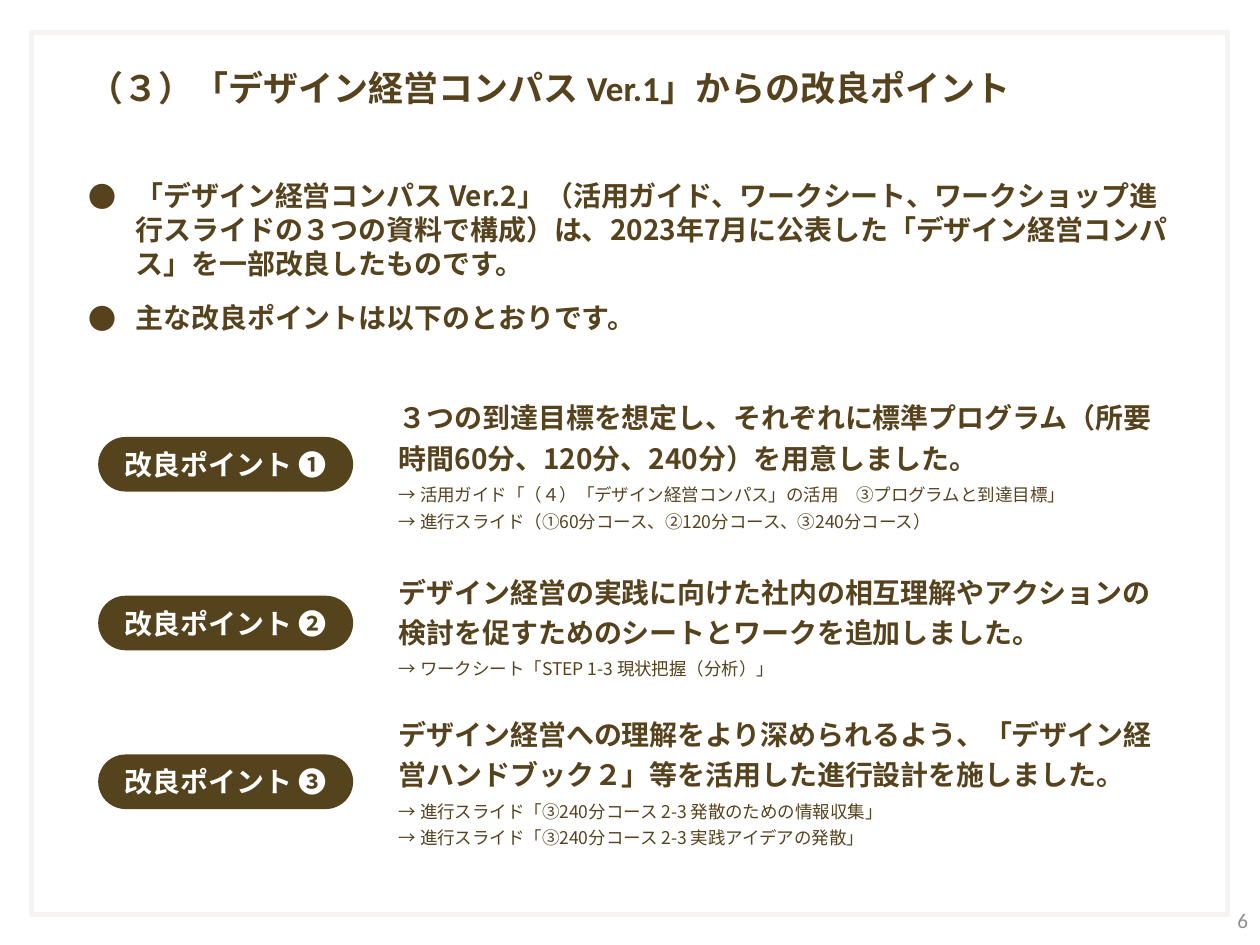
from lxml.etree import SubElement
from pptx import Presentation
from pptx.dml.color import RGBColor
from pptx.enum.shapes import MSO_SHAPE as SHAPE
from pptx.enum.text import MSO_ANCHOR as ANCHOR, MSO_AUTO_SIZE as AUTO, PP_ALIGN as ALIGN
from pptx.oxml.ns import qn
from pptx.util import Cm, Pt

COLORS = {"text": "56431E", "pill": "55431E", "white": "FFFFFF",
          "frame": "F6F3F1", "number": "8F8F8D"}
LATIN, JAPANESE = "Calibri", "Noto Sans CJK JP"

TITLE = "（３）「デザイン経営コンパス Ver.1」からの改良ポイント"
INTRO = [
    "「デザイン経営コンパス Ver.2」（活用ガイド、ワークシート、ワークショップ進行スライドの"
    "３つの資料で構成）は、2023年7月に公表した「デザイン経営コンパス」を一部改良したものです。",
    "主な改良ポイントは以下のとおりです。",
]
# Pill label, headline, references, top of the text and its height in cm
POINTS = [
    ("改良ポイント ❶",
     "３つの到達目標を想定し、それぞれに標準プログラム（所要時間60分、120分、240分）を用意しました。",
     ["→ 活用ガイド「（４）「デザイン経営コンパス」の活用　③プログラムと到達目標」",
      "→ 進行スライド（①60分コース、②120分コース、③240分コース）"], 7.92, 2.92),
    ("改良ポイント ❷",
     "デザイン経営の実践に向けた社内の相互理解やアクションの検討を促すためのシートとワークを追加しました。",
     ["→ ワークシート「STEP 1-3 現状把握（分析）」"], 11.43, 2.26),
    ("改良ポイント ❸",
     "デザイン経営への理解をより深められるよう、「デザイン経営ハンドブック２」等を活用した進行設計を施しました。",
     ["→ 進行スライド「③240分コース 2-3 発散のための情報収集」",
      "→ 進行スライド「③240分コース 2-3 実践アイデアの発散」"], 14.3, 2.92),
]


def color(name):
    return RGBColor.from_string(COLORS[name])


def place(sp, left, top, width, height):
    sp.left, sp.top, sp.width, sp.height = Cm(left), Cm(top), Cm(width), Cm(height)


def style(p, size, name, bold=True, font=LATIN):
    for r in p.runs:
        r.font.size, r.font.bold, r.font.name = Pt(size), bold, font
        r.font.color.rgb = color(name)
        SubElement(r._r.get_or_add_rPr(), qn("a:ea")).set("typeface", JAPANESE)


def add_frame(s, left, top, width, height):
    sp = s.shapes.add_shape(SHAPE.RECTANGLE, Cm(left), Cm(top), Cm(width), Cm(height))
    sp.shadow.inherit = False
    sp.fill.solid()
    sp.fill.fore_color.rgb = color("white")
    sp.line.color.rgb = color("frame")
    sp.line.width = Pt(3)
    s.shapes._spTree.insert(2, sp._element)  # behind the placeholders


def add_title(s, left, top, width, height):
    sp = s.shapes.title
    place(sp, left, top, width, height)
    tf = sp.text_frame
    tf.text = TITLE
    tf.auto_size, tf.vertical_anchor = AUTO.NONE, ANCHOR.TOP
    tf.paragraphs[0].alignment = ALIGN.LEFT
    style(tf.paragraphs[0], 20, "text")


def add_intro(s, left, top, width, height):
    sp = s.placeholders[1]
    place(sp, left, top, width, height)
    tf = sp.text_frame
    tf.text = "\n".join(INTRO)
    tf.auto_size = AUTO.NONE
    for p in tf.paragraphs:
        p.space_before, p.space_after = Pt(0), Pt(12)
        pPr = p._p.get_or_add_pPr()
        pPr.set("marL", str(Cm(0.96)))
        pPr.set("indent", str(Cm(-0.96)))
        SubElement(pPr, qn("a:buFont")).set("typeface", JAPANESE)
        SubElement(pPr, qn("a:buChar")).set("char", "●")
        style(p, 16, "text", font=JAPANESE)


def add_pill(s, label, left, top, width, height):
    sp = s.shapes.add_shape(SHAPE.ROUNDED_RECTANGLE, Cm(left), Cm(top), Cm(width), Cm(height))
    sp.shadow.inherit = False
    sp.adjustments[0] = 0.5
    sp.fill.solid()
    sp.fill.fore_color.rgb = color("pill")
    sp.line.fill.background()
    tf = sp.text_frame
    tf.text = label
    tf.vertical_anchor = ANCHOR.MIDDLE
    tf.paragraphs[0].alignment = ALIGN.CENTER
    style(tf.paragraphs[0], 16, "white")


def add_point_text(s, headline, references, left, top, width, height):
    tf = s.shapes.add_textbox(Cm(left), Cm(top), Cm(width), Cm(height)).text_frame
    tf.word_wrap = True
    tf.margin_left = tf.margin_right = tf.margin_bottom = 0
    tf.margin_top = Cm(0.03)
    tf.text = "\n".join([headline, *references])
    for i, p in enumerate(tf.paragraphs):
        p.line_spacing = 1.2
        if i:
            p.space_before = Pt(3 if i == 1 else 0.8)
        p._p.get_or_add_pPr().set("marL", str(Cm(0.03)))
        style(p, 10 if i else 16, "text", bold=i == 0, font=JAPANESE)


def add_points(s, left, top, width):
    """Pills at an equal pitch, each with its explanation on the right."""
    for i, (label, headline, references, text_top, text_height) in enumerate(POINTS):
        add_pill(s, label, left, top + i * 3.2, 5.14, 1.1)
        add_point_text(s, headline, references, left + 6.03, text_top, width - 6.03, text_height)


def add_page_number(s, left, top, width, height):
    tf = s.shapes.add_textbox(Cm(left), Cm(top), Cm(width), Cm(height)).text_frame
    tf.word_wrap = True
    tf.text = "6"
    tf.vertical_anchor = ANCHOR.MIDDLE
    tf.paragraphs[0].alignment = ALIGN.RIGHT
    style(tf.paragraphs[0], 12, "number", bold=False)


def main():
    prs = Presentation()
    prs.slide_width, prs.slide_height = Cm(25.4), Cm(19.05)
    s = prs.slides.add_slide(prs.slide_layouts[1])
    add_frame(s, 0.64, 0.66, 24.1, 17.78)
    add_title(s, 1.52, 1.22, 22.35, 1.12)
    add_intro(s, 1.52, 3.48, 22.35, 3.43)
    add_points(s, 1.98, 8.81, 21.4)
    add_page_number(s, 19.69, 18.03, 5.72, 1.02)
    prs.save("out.pptx")


if __name__ == "__main__":
    main()
